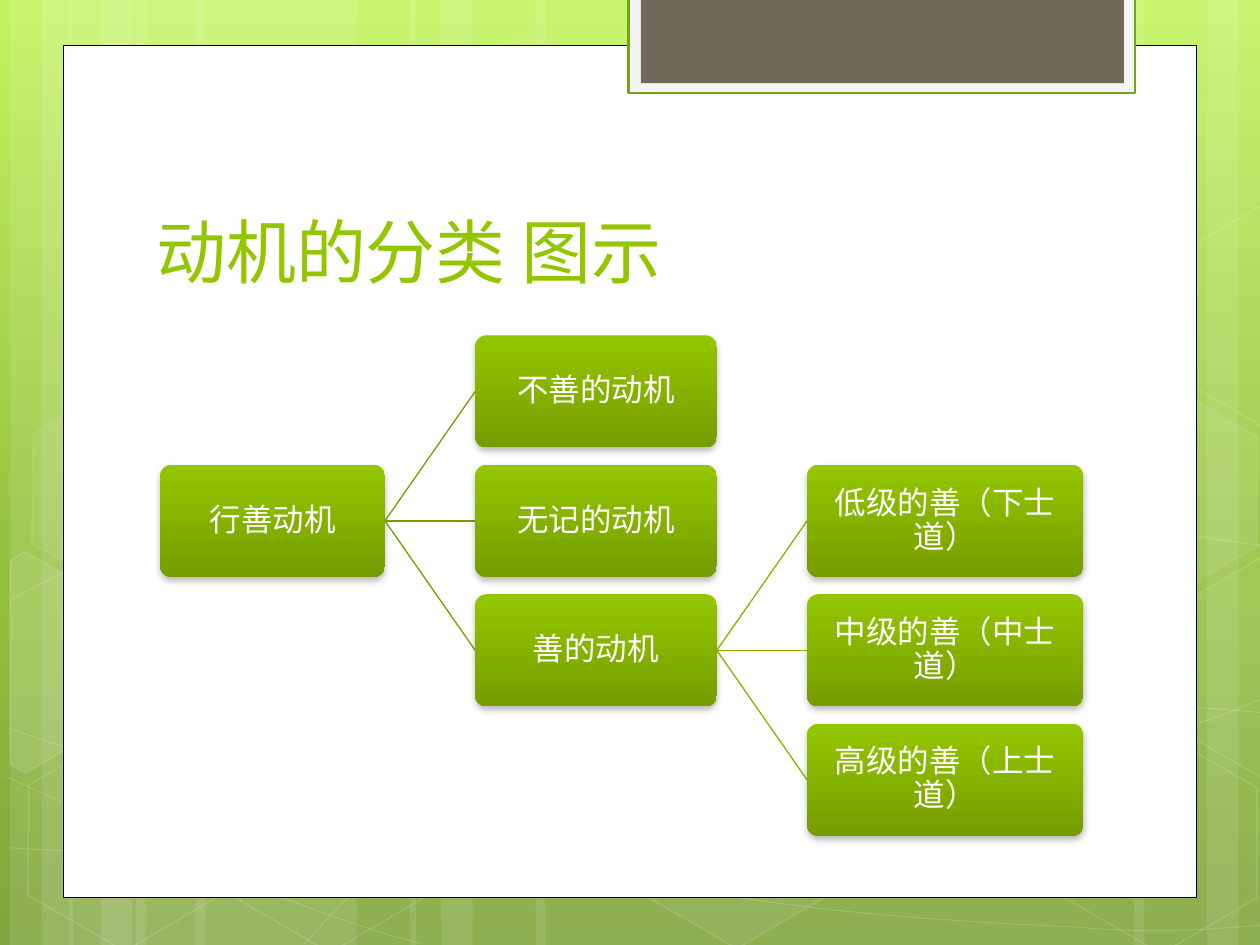
import copy

import pptx
import pptx.dml.color
import pptx.enum.shapes
import pptx.enum.text
import pptx.oxml
import pptx.oxml.ns
import pptx.util

Cm, Pt = pptx.util.Cm, pptx.util.Pt
MSO = pptx.enum.shapes.MSO_SHAPE
ALIGN, ANCHOR = pptx.enum.text.PP_ALIGN, pptx.enum.text.MSO_ANCHOR
qn = pptx.oxml.ns.qn
NS = pptx.oxml.ns.nsdecls("a")

COLORS = {
    "white": "FFFFFF", "black": "000000", "sky": "C3F35F", "leaf": "93BF3F",
    "moss": "81A53E", "tab_rim": "F5F5F5", "tab": "71685A", "tab_line": "74A510",
    "green": "94C600", "dark_green": "769D00", "link1": "779F00", "link2": "86B400",
}
FONT = "TeX Gyre Adventor"
W, H = 25.4, 19.05

# (left, width)
STRIPES = [(2.74, 4.45), (0.2, 1.27), (0.84, 2.11), (3.94, 4.45), (1.4, 1.27), (2.03, 2.11),
           (18.62, 4.45), (24.33, 1.27), (22.86, 2.11), (10.8, 7.82), (8.26, 1.27), (8.89, 2.11)]
# start point, then cubic segments
CURVES = [
    [(0.18, 17.09), (1.55, 17.17, 2.92, 17.25, 4.83, 17.22), (6.73, 17.2, 9.09, 17.15, 11.63, 16.89),
     (14.17, 16.64, 17.78, 16.15, 20.12, 15.67), (22.43, 15.19, 24.82, 14.43, 25.58, 14)],
    [(0.18, 12.12), (0.91, 11.71, 1.65, 11.33, 3.07, 10.95), (4.52, 10.57, 6.58, 10.01, 8.81, 9.83),
     (11.07, 9.65, 13.82, 9.63, 16.61, 9.83), (19.41, 10.03, 24.05, 10.82, 25.58, 11.02)],
    [(0.15, 15.67), (3.23, 17.07, 6.27, 18.47, 8.48, 19.02)],
    [(0.18, 14.68), (0.97, 14.96, 1.78, 15.24, 3.25, 15.65), (4.72, 16.03, 6.93, 16.66, 9.07, 17.09),
     (11.18, 17.53, 13.84, 17.98, 15.95, 18.24), (18.06, 18.52, 20.32, 18.62, 21.67, 18.69),
     (22.99, 18.8, 23.34, 18.75, 24, 18.75), (24.66, 18.72, 25.12, 18.67, 25.58, 18.64)],
    [(6.15, 19.02), (6.6, 18.52, 7.06, 18.01, 7.67, 17.55), (8.28, 17.09, 9.14, 16.59, 9.86, 16.23),
     (10.57, 15.88, 11, 15.72, 11.94, 15.47), (12.85, 15.21, 14.55, 14.86, 15.44, 14.68),
     (16.36, 14.5, 16.48, 14.5, 17.27, 14.45), (18.06, 14.38, 19.3, 14.3, 20.17, 14.27),
     (21.06, 14.25, 22.5, 14.27, 24.21, 14.27), (24.66, 14.3, 25.1, 14.33, 25.55, 14.38)],
]
# left, top, fill opacity (0 = no fill), line opacity
HEXAGONS = [(8.48, 0.91, 4, 8), (12.62, 14.96, 6, 12), (0.28, 15.01, 0, 12), (0.36, 7.92, 7, 8),
            (4.42, 15.04, 0, 12), (19.13, 11.51, 10, 12), (21.18, 15.06, 0, 12), (21.18, 7.98, 7, 8)]
# outlines before rotation, from the top left of their box
LEFT_CUT = [(0, 0.3), (0.15, 0), (2.4, 0), (3.51, 1.93), (2.4, 3.86), (2.05, 3.86)]
RIGHT_CUT = [(0, 1.93), (1.1, 0), (1.32, 0), (3.45, 3.66), (3.33, 3.86), (1.1, 3.86)]
# left, top, outline, fill opacity
CUT_HEXAGONS = [(-0.84, 11.66, LEFT_CUT, 10), (23.29, 11.28, RIGHT_CUT, 4), (23.29, 4.19, RIGHT_CUT, 0)]
TREE = ("行善动机", 1, [
    ("不善的动机", 0, []),
    ("无记的动机", 1, []),
    ("善的动机", 2, [("低级的善（下士道）", 1, []), ("中级的善（中士道）", 2, []), ("高级的善（上士道）", 3, [])]),
])


def rgb(name):
    return pptx.dml.color.RGBColor.from_string(COLORS[name])


def apply(obj, values):
    for name, value in values.items():
        setattr(obj, name, value)


def set_opacity(fill_parent, percent):
    if percent < 100:
        clr = fill_parent.find(qn("a:solidFill"))[0]
        clr.append(pptx.oxml.parse_xml(f'<a:alpha {NS} val="{percent * 1000}"/>'))


def paint(sp, fill=None, line=None, width=0.5, fill_opacity=100, line_opacity=100):
    sp.shadow.inherit = False
    if fill and fill_opacity:
        sp.fill.solid()
        sp.fill.fore_color.rgb = rgb(fill)
        set_opacity(sp._element.spPr, fill_opacity)
    else:
        sp.fill.background()
    if line:
        sp.line.color.rgb = rgb(line)
        sp.line.width = Pt(width)
        set_opacity(sp._element.spPr.find(qn("a:ln")), line_opacity)
    else:
        sp.line.fill.background()


def add_preset(s, kind, box, **style):
    sp = s.shapes.add_shape(kind, *map(Cm, box))
    paint(sp, **style)
    return sp


def add_outline(s, points, close, **style):
    pts = [(Cm(x), Cm(y)) for x, y in points]
    builder = s.shapes.build_freeform(*pts[0])
    builder.add_line_segments(pts[1:], close=close)
    sp = builder.convert_to_shape()
    paint(sp, **style)
    return sp


def add_curve(s, start, segments, **style):
    """Draw cubic segments: each three line steps become one Bezier step."""
    points = [start] + [seg[i:i + 2] for seg in segments for i in (0, 2, 4)]
    sp = add_outline(s, points, False, **style)
    steps = list(sp._element.iter(qn("a:lnTo")))
    for i in range(0, len(steps), 3):
        bezier = pptx.oxml.parse_xml(f"<a:cubicBezTo {NS}/>")
        steps[i].addprevious(bezier)
        for step in steps[i:i + 3]:
            bezier.append(step[0])
            step.getparent().remove(step)


def set_gradient(fill, stops):
    """Fill downwards with (position, colour) stops."""
    fill.gradient()
    fill.gradient_angle = 270
    gs_lst = fill.gradient_stops[0]._gs.getparent()
    for _ in stops[2:]:
        gs_lst.append(copy.deepcopy(gs_lst[-1]))
    for stop, (position, color) in zip(fill.gradient_stops, stops):
        stop.position = position
        stop.color.rgb = rgb(color)


def write(tf, text, size, color, align, **frame):
    apply(tf, {"word_wrap": True, **frame})
    p = tf.paragraphs[0]
    p.alignment = align
    r = p.add_run()
    r.text = text
    apply(r.font, {"size": Pt(size), "name": FONT})
    r.font.color.rgb = rgb(color)
    return p


def backdrop(s):
    set_gradient(s.background.fill, [(0, "sky"), (0.62, "leaf"), (1, "moss")])
    for x, w in STRIPES:
        add_preset(s, MSO.RECTANGLE, (x, 0, w, H), fill="white", fill_opacity=10)
    for start, *segments in CURVES:
        add_curve(s, start, segments, line="white", line_opacity=20)
    edge = {"fill": "white", "line": "white", "width": 1}
    for x, y, fill_opacity, line_opacity in HEXAGONS:
        sp = add_preset(s, MSO.HEXAGON, (x, y, 4.45, 3.86), fill_opacity=fill_opacity,
                        line_opacity=line_opacity, **edge)
        sp.adjustments[0] = 0.285
        sp.rotation = 30
    for x, y, outline, fill_opacity in CUT_HEXAGONS:
        sp = add_outline(s, [(x + dx, y + dy) for dx, dy in outline], True,
                         fill_opacity=fill_opacity, line_opacity=12, **edge)
        sp.rotation = 30


def panel(s, x, y, w, h):
    add_preset(s, MSO.RECTANGLE, (x, y, w, h), fill="white", line="black")
    add_preset(s, MSO.RECTANGLE, (x + 11.4, -0.05, 10.21, 1.93), fill="tab_rim", line="tab_line", width=1.25)
    add_preset(s, MSO.RECTANGLE, (x + 11.65, -0.05, 9.74, 1.73), fill="tab")


def title(s, x, y, w, h):
    tb = s.shapes.add_textbox(*map(Cm, (x, y, w, h)))
    write(tb.text_frame, "动机的分类 图示", 40, "green", ALIGN.LEFT, vertical_anchor=ANCHOR.BOTTOM)


def node(s, text, box):
    sp = add_preset(s, MSO.ROUNDED_RECTANGLE, box)
    sp.adjustments[0] = 0.1
    set_gradient(sp.fill, [(0, "green"), (1, "dark_green")])
    sp._element.spPr.find(qn("a:effectLst")).append(pptx.oxml.parse_xml(
        f'<a:outerShdw {NS} blurRad="50800" dist="25400" dir="5400000" rotWithShape="0">'
        f'<a:srgbClr val="{COLORS["black"]}"><a:alpha val="28000"/></a:srgbClr></a:outerShdw>'))
    margins = {f"margin_{side}": Cm(0.03) for side in ("left", "right", "top", "bottom")}
    p = write(sp.text_frame, text, 18, "white", ALIGN.CENTER, vertical_anchor=ANCHOR.MIDDLE, **margins)
    p.line_spacing = 0.9


def link(s, x1, y1, x2, y2, color):
    c = s.shapes.add_connector(pptx.enum.shapes.MSO_CONNECTOR.STRAIGHT, *map(Cm, (x1, y1, x2, y2)))
    c.line.color.rgb = rgb(color)
    c.line.width = Pt(0.75)
    c._element.spPr.append(pptx.oxml.parse_xml(f"<a:effectLst {NS}/>"))


def tree(s, x, y, branch, level=0):
    """Draw a branch whose column starts at x; y is the top of row 0."""
    widths, gap, height, pitch = (4.53, 4.87, 5.57), 1.82, 2.26, 2.61
    text, row, children = branch
    right = x + widths[level]
    middle = y + height / 2
    node(s, text, (x, y + row * pitch, widths[level], height))
    for child in children:
        link(s, right, middle + row * pitch, right + gap, middle + child[1] * pitch,
             ("link1", "link2")[level])
        tree(s, right + gap, y, child, level + 1)


def main():
    prs = pptx.Presentation()
    apply(prs, {"slide_width": Cm(W), "slide_height": Cm(H)})
    s = prs.slides.add_slide(prs.slide_layouts[6])
    backdrop(s)
    panel(s, 1.27, 0.91, 22.86, 17.19)
    title(s, 2.9, 2.84, 19.51, 3.18)
    tree(s, 3.23, 6.76, TREE)
    prs.save("out.pptx")


if __name__ == "__main__":
    main()
